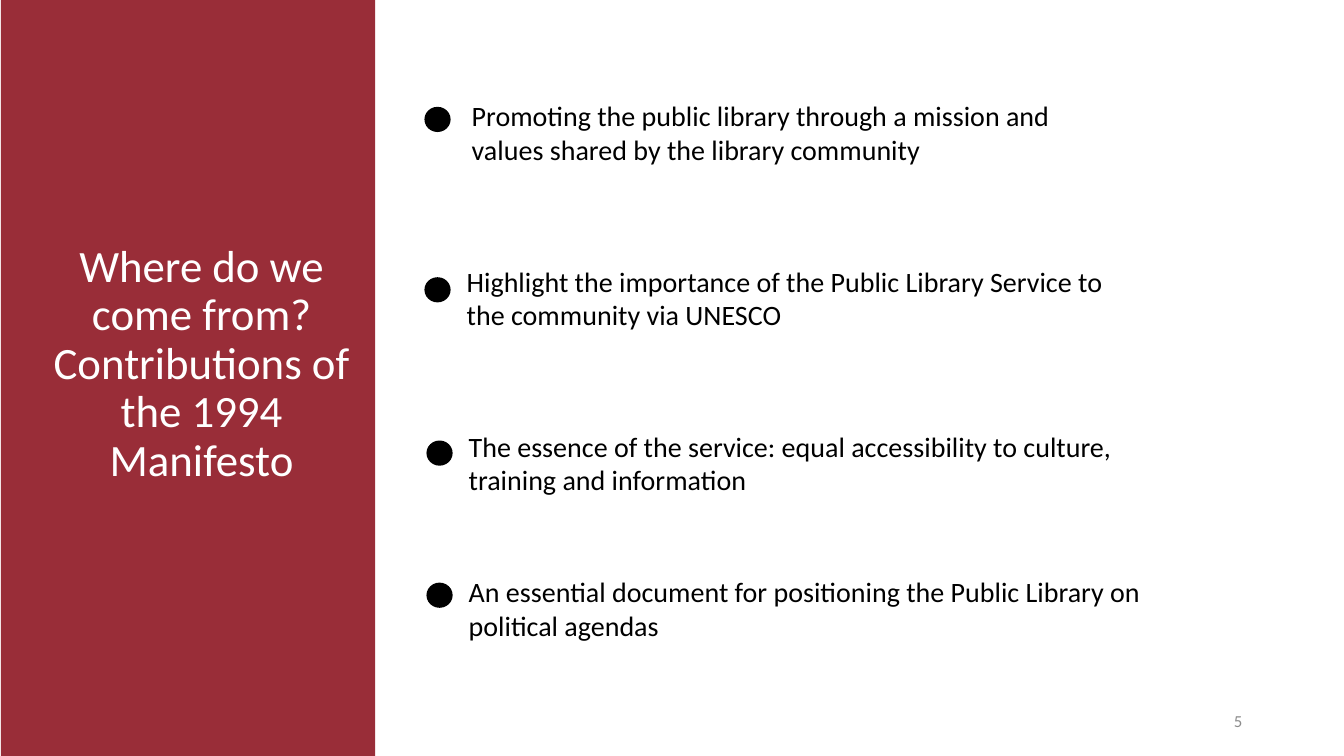
from pptx import Presentation
from pptx.dml.color import RGBColor
from pptx.enum.shapes import MSO_SHAPE
from pptx.enum.text import MSO_ANCHOR, MSO_AUTO_SIZE, PP_ALIGN
from pptx.util import Inches, Pt

RECT, OVAL = MSO_SHAPE.RECTANGLE, MSO_SHAPE.OVAL
TOP, MIDDLE, BOTTOM = MSO_ANCHOR.TOP, MSO_ANCHOR.MIDDLE, MSO_ANCHOR.BOTTOM
LEFT, CENTER, RIGHT = PP_ALIGN.LEFT, PP_ALIGN.CENTER, PP_ALIGN.RIGHT
NO_FIT = MSO_AUTO_SIZE.NONE

WIDTH, HEIGHT = 13.33, 7.5
RED, BLACK, WHITE, GREY = "992D38", "000000", "FFFFFF", "8C8C8C"
TITLE = "Where do we come from? Contributions of the 1994 Manifesto"
PAGE = "5"
# text, (left, top, width) of its box, (left, top) of its dot
CONTRIBUTIONS = [
    ("Promoting the public library through a mission and values shared by the library community",
     (4.09, 0.93, 7.12), (4.21, 1.06)),
    ("Highlight the importance of the Public Library Service to the community via UNESCO",
     (4.04, 2.57, 7.35), (4.21, 2.75)),
    ("The essence of the service: equal accessibility to culture, training and information",
     (4.06, 4.21, 7.15), (4.23, 4.37)),
    ("An essential document for positioning the Public Library on political agendas",
     (4.06, 5.65, 7.35), (4.23, 5.78)),
]
ITEM_HEIGHT, ITEM_INDENT = 0.77, 0.49
DOT_SIZE = (0.26, 0.25)


def rgb(color):
    return RGBColor.from_string(color)


def add_block(kind, box, color):
    sp = slide.shapes.add_shape(kind, *map(Inches, box))
    sp.shadow.inherit = False
    sp.fill.solid()
    sp.fill.fore_color.rgb = rgb(color)
    sp.line.fill.background()
    return sp


def write(sp, text, size, color, align=LEFT, anchor=TOP, spacing=1.0):
    tf = sp.text_frame
    frame = {"word_wrap": True, "auto_size": NO_FIT, "vertical_anchor": anchor}
    for name, value in frame.items():
        setattr(tf, name, value)
    p = tf.paragraphs[0]
    p.alignment, p.line_spacing = align, spacing
    r = p.add_run()
    r.text = text
    for name, value in {"name": "Calibri", "size": Pt(size)}.items():
        setattr(r.font, name, value)
    r.font.color.rgb = rgb(color)
    return p


def add_text(box, *args, **kwargs):
    return write(slide.shapes.add_textbox(*map(Inches, box)), *args, **kwargs)


prs = Presentation()
prs.slide_width, prs.slide_height = Inches(WIDTH), Inches(HEIGHT)
slide = prs.slides.add_slide(prs.slide_layouts[5])

panel = add_block(RECT, (0.01, 0, 3.71, HEIGHT), RED)
title = slide.shapes.title
title.left, title.top, title.width, title.height = map(Inches, (0.28, 3.93, 3.44, 0.94))
write(title, TITLE, 32, WHITE, CENTER, BOTTOM, 0.9)
title._element.addprevious(panel._element)  # panel behind the title

for text, box, dot in CONTRIBUTIONS:
    p = add_text((*box, ITEM_HEIGHT), text, 20, BLACK)
    p._p.get_or_add_pPr().set("marL", str(Inches(ITEM_INDENT)))
    add_block(OVAL, (*dot, *DOT_SIZE), BLACK)

add_text((9.42, 6.95, 3, 0.4), PAGE, 12, GREY, RIGHT, MIDDLE)
prs.save("out.pptx")
